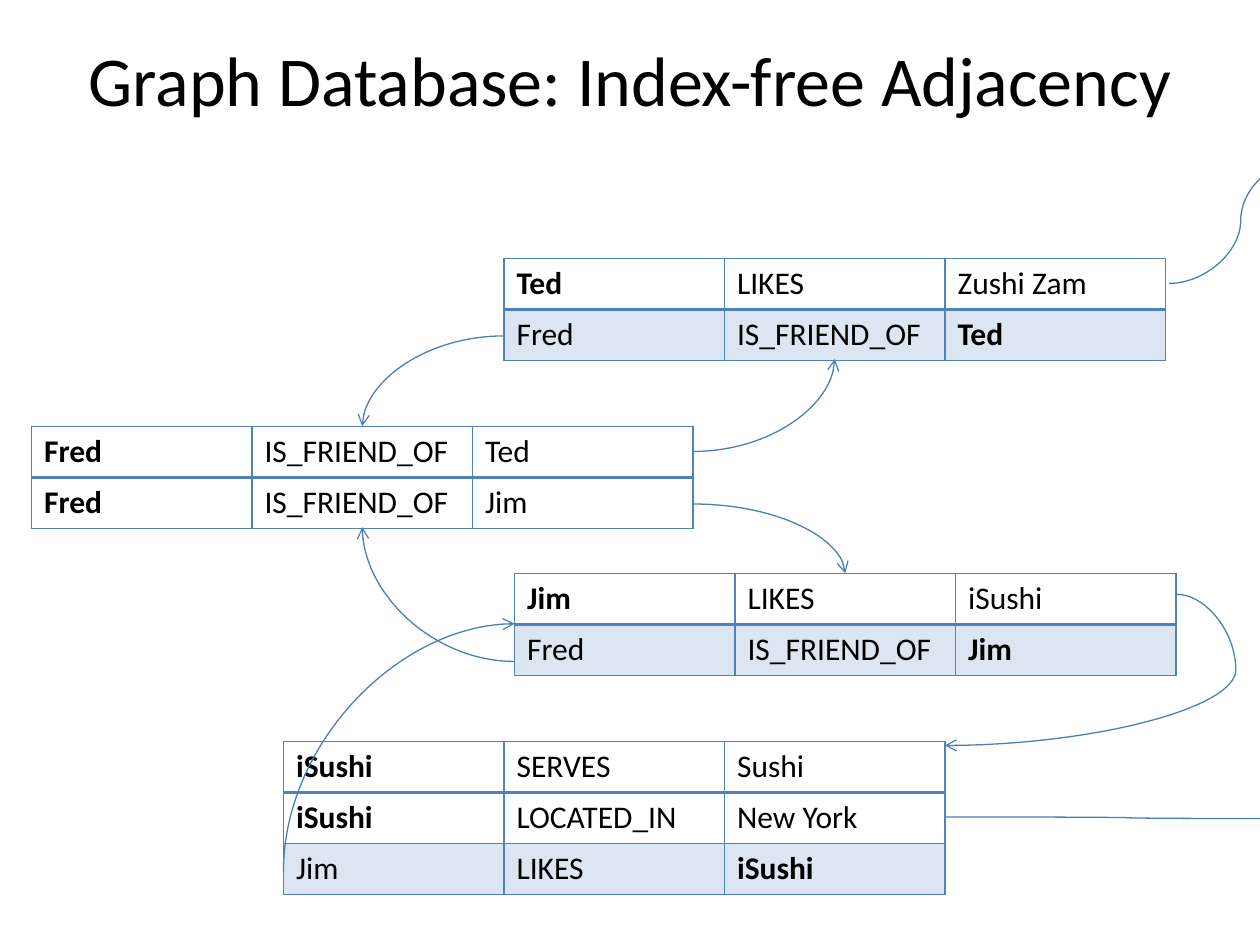
import lxml.etree
import pptx
import pptx.dml.color
import pptx.enum.shapes
import pptx.enum.text
import pptx.oxml
import pptx.oxml.ns
import pptx.util

Pt = pptx.util.Pt
qn = pptx.oxml.ns.qn


def color(value):
    return pptx.dml.color.RGBColor.from_string(value)


def write(text_frame, text, size=18, bold=False, align=pptx.enum.text.PP_ALIGN.LEFT):
    paragraph = text_frame.paragraphs[0]
    paragraph.alignment = align
    run = paragraph.add_run()
    run.text = text
    run.font.name = "Calibri"
    run.font.size = Pt(size)
    run.font.bold = bold
    run.font.color.rgb = color("000000")


presentation = pptx.Presentation()
presentation.slide_width = Pt(720)
presentation.slide_height = Pt(540)
slide = presentation.slides.add_slide(presentation.slide_layouts[6])

title = slide.shapes.add_textbox(Pt(36), Pt(0), Pt(648), Pt(90))
title.text_frame.word_wrap = True
title.text_frame.vertical_anchor = pptx.enum.text.MSO_ANCHOR.MIDDLE
write(title.text_frame, "Graph Database: Index-free Adjacency", size=40,
      align=pptx.enum.text.PP_ALIGN.CENTER)

column_width = 126
row_height = 29.2
relations = [
    (18, 243.6, "Fred", [("Fred", "IS_FRIEND_OF", "Ted"), ("Fred", "IS_FRIEND_OF", "Jim")]),
    (294, 327.6, "Jim", [("Jim", "LIKES", "iSushi"), ("Fred", "IS_FRIEND_OF", "Jim")]),
    (288, 147.6, "Ted", [("Ted", "LIKES", "Zushi Zam"), ("Fred", "IS_FRIEND_OF", "Ted")]),
    (162, 423.6, "iSushi", [("iSushi", "SERVES", "Sushi"), ("iSushi", "LOCATED_IN", "New York"),
                            ("Jim", "LIKES", "iSushi")]),
]
for left, top, node, rows in relations:
    shape = slide.shapes.add_table(len(rows), 3, Pt(left), Pt(top),
                                   Pt(3 * column_width), Pt(len(rows) * row_height))
    table = shape.table
    table.first_row = False
    table.horz_banding = False
    for column in table.columns:
        column.width = Pt(column_width)
    for row_index, row in enumerate(rows):
        table.rows[row_index].height = Pt(row_height)
        for column_index, text in enumerate(row):
            cell = table.cell(row_index, column_index)
            write(cell.text_frame, text, bold=text == node)
            cell.fill.solid()
            cell.fill.fore_color.rgb = color("FFFFFF" if row[0] == node else "DCE6F2")
            widths = {"L": 1, "R": 1, "T": 2 if row_index == 1 else 1, "B": 2 if row_index == 0 else 1}
            properties = cell._tc.get_or_add_tcPr()
            for position, (side, width) in enumerate(widths.items()):
                border = lxml.etree.Element(qn(f"a:ln{side}"), w=str(Pt(width)))
                fill = lxml.etree.SubElement(border, qn("a:solidFill"))
                lxml.etree.SubElement(fill, qn("a:srgbClr"), val="4F81BD")
                properties.insert(position, border)

links = [
    (396, 258, 477, 205.2, "curvedConnector2", "tailEnd", None),
    (396, 288, 483, 327.6, "curvedConnector2", "tailEnd", None),
    (294, 378, 207, 301.2, "curvedConnector2", "tailEnd", None),
    (672, 339.6, 540, 426, "curvedConnector3", "tailEnd", -25900),
    (540, 466.8, 750, 467.8, "curvedConnector3", "tailEnd", 50000),
    (294, 356.4, 162, 498, "curvedConnector2", "headEnd", None),
    (288, 192, 207, 243.6, "curvedConnector2", "tailEnd", None),
    (668, 162, 750, 90, "curvedConnector3", "tailEnd", 50000),
]
for begin_x, begin_y, end_x, end_y, preset, arrow_end, bend in links:
    connector = slide.shapes.add_connector(pptx.enum.shapes.MSO_CONNECTOR.CURVE,
                                           Pt(begin_x), Pt(begin_y), Pt(end_x), Pt(end_y))
    connector.line.color.rgb = color("4B7EBC")
    connector.line.width = Pt(0.75)
    properties = connector._element.spPr
    geometry = properties.find(qn("a:prstGeom"))
    geometry.set("prst", preset)
    if bend is not None:
        adjustments = geometry.find(qn("a:avLst"))
        lxml.etree.SubElement(adjustments, qn("a:gd"), name="adj1", fmla=f"val {bend}")
    lxml.etree.SubElement(properties.find(qn("a:ln")), qn(f"a:{arrow_end}"), type="arrow")
    lxml.etree.SubElement(properties, qn("a:effectLst"))

presentation.save("out.pptx")
